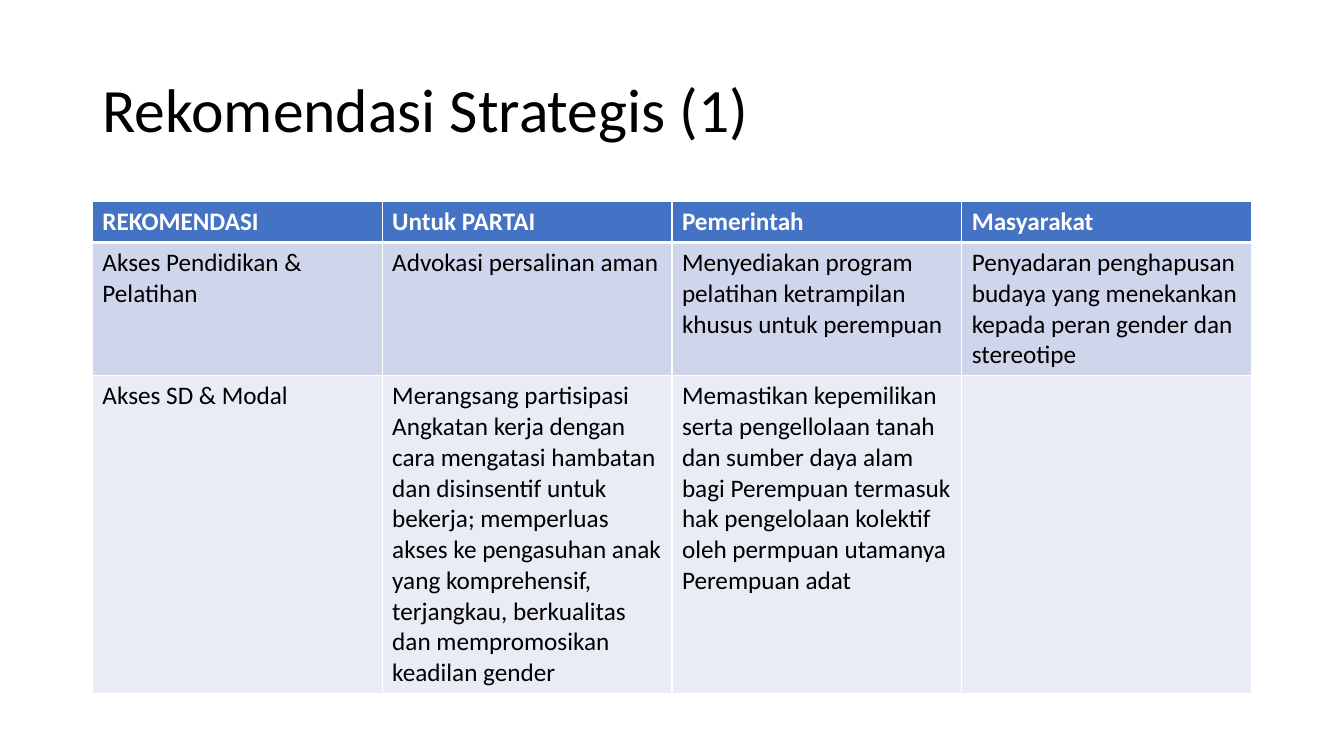
from dataclasses import dataclass

from lxml.etree import SubElement
from pptx import Presentation
from pptx.dml.color import RGBColor
from pptx.enum.text import MSO_ANCHOR, PP_ALIGN
from pptx.oxml.ns import qn
from pptx.slide import Slide
from pptx.table import _Cell as Cell
from pptx.text.text import TextFrame
from pptx.util import Emu, Pt

EMU_PER_PX = 9525
FONT = "Calibri"
BLACK, WHITE = "000000", "FFFFFF"
LEFT, WIDTH = 88, 1104
TABLE_TOP = 192


@dataclass(frozen=True)
class TableRow:
    height: int
    fill: str
    texts: tuple[str, ...]
    is_header: bool = False


ROWS = (
    TableRow(39, "4472C4", ("REKOMENDASI", "Untuk PARTAI", "Pemerintah", "Masyarakat"), is_header=True),
    TableRow(127, "CFD5EA", (
        "Akses Pendidikan & Pelatihan",
        "Advokasi persalinan aman",
        "Menyediakan program pelatihan ketrampilan khusus untuk perempuan",
        "Penyadaran penghapusan budaya yang menekankan kepada peran gender dan stereotipe",
    )),
    TableRow(296, "E9EBF5", (
        "Akses SD & Modal",
        "Merangsang partisipasi Angkatan kerja dengan cara mengatasi hambatan dan disinsentif "
        "untuk bekerja; memperluas akses ke pengasuhan anak yang komprehensif, terjangkau, "
        "berkualitas dan mempromosikan keadilan gender",
        "Memastikan kepemilikan serta pengellolaan tanah dan sumber daya alam bagi Perempuan "
        "termasuk hak pengelolaan kolektif oleh permpuan utamanya Perempuan adat",
        "",
    )),
)


def px(length: int) -> Emu:
    return Emu(length * EMU_PER_PX)


def color(value: str) -> RGBColor:
    return RGBColor.from_string(value)


def write_text(text_frame: TextFrame, text: str, size: int, text_color: str, bold: bool = False) -> None:
    text_frame.text = text
    for run in text_frame.paragraphs[0].runs:
        run.font.name = FONT
        run.font.size = Pt(size)
        run.font.bold = bold
        run.font.color.rgb = color(text_color)


def add_borders(cell: Cell, top: int, bottom: int) -> None:
    """Draw white cell borders; top and bottom widths are in points."""
    properties = cell._tc.get_or_add_tcPr()
    for tag, width in (("a:lnL", 1), ("a:lnR", 1), ("a:lnT", top), ("a:lnB", bottom)):
        line = SubElement(properties, qn(tag), w=str(Pt(width)))
        SubElement(SubElement(line, qn("a:solidFill")), qn("a:srgbClr"), val=WHITE)


def add_title(slide: Slide) -> None:
    title = slide.shapes.title
    title.left, title.top, title.width, title.height = px(LEFT), px(38), px(WIDTH), px(139)
    write_text(title.text_frame, "Rekomendasi Strategis (1)", 44, BLACK)
    title.text_frame.vertical_anchor = MSO_ANCHOR.MIDDLE
    paragraph = title.text_frame.paragraphs[0]
    paragraph.alignment = PP_ALIGN.LEFT
    paragraph.line_spacing = 0.9


def add_recommendations(slide: Slide) -> None:
    column_count = len(ROWS[0].texts)
    height = sum(row.height for row in ROWS)
    table = slide.shapes.add_table(
        len(ROWS), column_count, px(LEFT), px(TABLE_TOP), px(WIDTH), px(height)
    ).table
    for column in table.columns:
        column.width = px(WIDTH // column_count)
    for row_index, row in enumerate(ROWS):
        table.rows[row_index].height = px(row.height)
        for column_index, text in enumerate(row.texts):
            cell = table.cell(row_index, column_index)
            add_borders(cell, top=3 if row_index == 1 else 1, bottom=3 if row.is_header else 1)
            cell.fill.solid()
            cell.fill.fore_color.rgb = color(row.fill)
            write_text(cell.text_frame, text, 18, WHITE if row.is_header else BLACK, row.is_header)


def main() -> None:
    presentation = Presentation()
    presentation.slide_width, presentation.slide_height = px(1280), px(720)
    slide = presentation.slides.add_slide(presentation.slide_layouts.get_by_name("Title Only"))
    add_title(slide)
    add_recommendations(slide)
    presentation.save("out.pptx")


if __name__ == "__main__":
    main()
